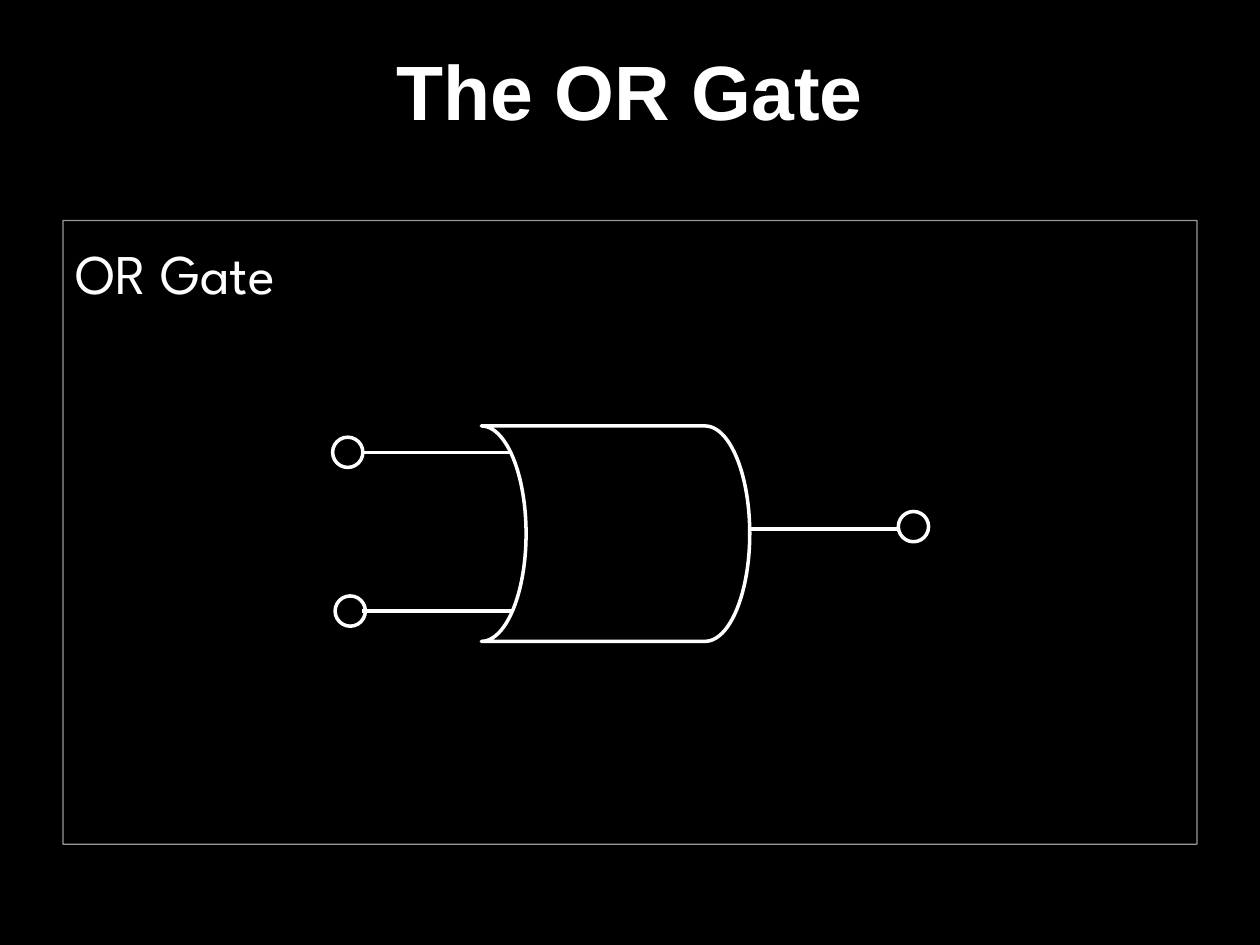
import pptx
import pptx.util
import pptx.dml.color
import pptx.enum.shapes
import pptx.enum.text
import lxml.etree
from pptx.util import Inches

COLORS = {"back": "000000", "ink": "FFFFFF"}
NS = "http://schemas.openxmlformats.org/drawingml/2006/main"
SHAPE = pptx.enum.shapes.MSO_SHAPE


def rgb(name):
    return pptx.dml.color.RGBColor.from_string(COLORS[name])


def write(sp, text, size, font, bold, align):
    tf = sp.text_frame
    tf.word_wrap = True
    tf.vertical_anchor = pptx.enum.text.MSO_ANCHOR.TOP
    p = tf.paragraphs[0]
    p.alignment = align
    r = p.add_run()
    r.text = text
    r.font.size = pptx.util.Pt(size)
    r.font.name = font
    r.font.bold = bold
    r.font.color.rgb = rgb("ink")


prs = pptx.Presentation()
prs.slide_width = Inches(10)
prs.slide_height = Inches(7.5)
s = prs.slides.add_slide(prs.slide_layouts[6])
s.background.fill.solid()
s.background.fill.fore_color.rgb = rgb("back")

title = s.shapes.add_textbox(Inches(0.5), Inches(0.3), Inches(9), Inches(1.25))
write(title, "The OR Gate", 44, "Arial", True, pptx.enum.text.PP_ALIGN.CENTER)

panel = s.shapes.add_shape(SHAPE.RECTANGLE, Inches(0.5), Inches(1.75), Inches(9), Inches(4.95))
panel.shadow.inherit = False
panel.fill.solid()
panel.fill.fore_color.rgb = rgb("back")
panel.line.color.rgb = rgb("ink")
panel.line.width = pptx.util.Pt(0.75)
for fill, alpha in zip(panel.element.spPr.iter(f"{{{NS}}}srgbClr"), (90000, 60000)):
    lxml.etree.SubElement(fill, f"{{{NS}}}alpha", val=str(alpha))
panel.text_frame.margin_top = Inches(0.14)
write(panel, "OR Gate", 32, "League Spartan", False, pptx.enum.text.PP_ALIGN.LEFT)

gate = s.shapes.add_group_shape()
for x, y in ((2.87, 3.59), (2.87, 4.85), (5.94, 4.2)):
    wire = gate.shapes.add_connector(
        pptx.enum.shapes.MSO_CONNECTOR.STRAIGHT,
        Inches(x + 1.19), Inches(y), Inches(x), Inches(y))
    wire.line.color.rgb = rgb("ink")
    wire.line.width = pptx.util.Pt(2)
    lxml.etree.SubElement(wire.element.spPr, f"{{{NS}}}effectLst")

for kind, x, y, w, h, turn in (
    (SHAPE.FLOWCHART_CONNECTOR, 2.64, 3.47, 0.24, 0.24, 0),
    (SHAPE.FLOWCHART_CONNECTOR, 2.66, 4.73, 0.24, 0.24, 0),
    (SHAPE.FLOWCHART_CONNECTOR, 7.13, 4.06, 0.24, 0.24, 0),
    (SHAPE.FLOWCHART_STORED_DATA, 3.82, 3.38, 2.13, 1.71, 180),
):
    sp = gate.shapes.add_shape(kind, Inches(x), Inches(y), Inches(w), Inches(h))
    sp.rotation = turn
    sp.shadow.inherit = False
    sp.fill.background()
    sp.line.color.rgb = rgb("ink")
    sp.line.width = pptx.util.Pt(2)

prs.save("out.pptx")
